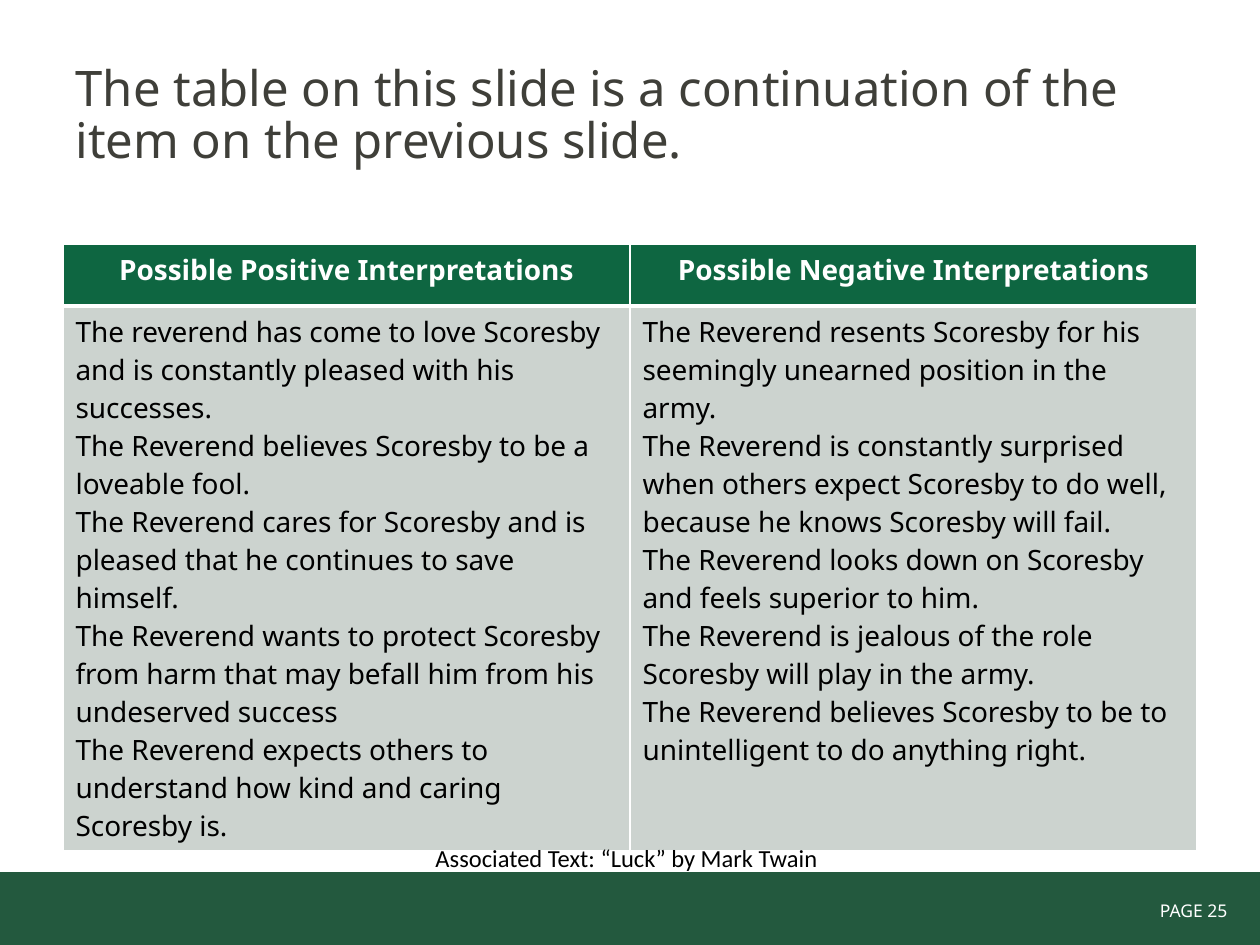
import dataclasses

import lxml.etree
import pptx
import pptx.dml.color
import pptx.enum.shapes
import pptx.enum.text
import pptx.oxml.ns
import pptx.util

Cm, Pt = pptx.util.Cm, pptx.util.Pt
RGBColor = pptx.dml.color.RGBColor
Align = pptx.enum.text.PP_ALIGN

WHITE = RGBColor(0xFF, 0xFF, 0xFF)
BLACK = RGBColor(0x00, 0x00, 0x00)
SLATE = RGBColor(0x3F, 0x3F, 0x39)
FOREST = RGBColor(0x23, 0x59, 0x3E)
GREEN = RGBColor(0x0E, 0x66, 0x41)
MIST = RGBColor(0xCC, 0xD3, 0xCF)
SANS = "Noto Sans"


@dataclasses.dataclass
class Style:
    size: float
    color: RGBColor
    name: str = SANS
    bold: bool = False
    align: Align = Align.LEFT


@dataclasses.dataclass
class Column:
    head: str
    points: list[str]


@dataclasses.dataclass
class Label:
    text: str
    box: tuple[float, float, float, float]
    style: Style
    wrap: bool


HEAD = Style(16, WHITE, bold=True, align=Align.CENTER)
BODY = Style(16, BLACK)

COLUMNS = [
    Column("Possible Positive Interpretations", [
        "The reverend has come to love Scoresby and is constantly pleased with his successes.",
        "The Reverend believes Scoresby to be a loveable fool.",
        "The Reverend cares for Scoresby and is pleased that he continues to save himself.",
        "The Reverend wants to protect Scoresby from harm that may befall him "
        "from his undeserved success",
        "The Reverend expects others to understand how kind and caring Scoresby is.",
    ]),
    Column("Possible Negative Interpretations", [
        "The Reverend resents Scoresby for his seemingly unearned position in the army.",
        "The Reverend is constantly surprised when others expect Scoresby to do well, "
        "because he knows Scoresby will fail.",
        "The Reverend looks down on Scoresby and feels superior to him.",
        "The Reverend is jealous of the role Scoresby will play in the army.",
        "The Reverend believes Scoresby to be to unintelligent to do anything right.",
    ]),
]

LABELS = [
    Label("PAGE 25", (20.95, 18.01, 4.04, 0.69),
          Style(10, WHITE, align=Align.RIGHT), True),
    Label("Associated Text: “Luck” by Mark Twain", (8.53, 16.87, 8.28, 0.86),
          Style(14, BLACK, "Calibri"), False),
]


def write(frame, lines: list[str], style: Style) -> None:
    frame.text = "\n".join(lines)
    for para in frame.paragraphs:
        para.alignment = style.align
        font = para.font
        font.name, font.size, font.bold = style.name, Pt(style.size), style.bold
        font.color.rgb = style.color


def edge(cell, side: str, width: float) -> None:
    qn = pptx.oxml.ns.qn
    props = cell._tc.get_or_add_tcPr()
    line = lxml.etree.SubElement(props, qn(f"a:ln{side}"), w=str(Pt(width)))
    fill = lxml.etree.SubElement(line, qn("a:solidFill"))
    lxml.etree.SubElement(fill, qn("a:srgbClr"), val=str(WHITE))


def fill_cell(cell, lines: list[str], style: Style, color: RGBColor,
              top: float, base: float) -> None:
    for side, width in (("L", 1), ("R", 1), ("T", top), ("B", base)):
        edge(cell, side, width)
    cell.fill.solid()
    cell.fill.fore_color.rgb = color
    write(cell.text_frame, lines, style)


def add_label(slide, label: Label) -> None:
    frame = slide.shapes.add_textbox(*map(Cm, label.box)).text_frame
    frame.word_wrap = label.wrap
    write(frame, [label.text], label.style)


def main() -> None:
    deck = pptx.Presentation()
    deck.slide_width, deck.slide_height = Cm(25.4), Cm(19.05)
    slide = deck.slides.add_slide(deck.slide_layouts[5])

    # Footer band
    band = slide.shapes.add_shape(
        pptx.enum.shapes.MSO_SHAPE.RECTANGLE, 0, Cm(17.58), Cm(25.4), Cm(1.47))
    band.shadow.inherit = False
    band.fill.solid()
    band.fill.fore_color.rgb = FOREST
    band.line.fill.background()

    # Title
    title = slide.shapes.title
    title.left, title.top, title.width, title.height = map(Cm, (1.27, 0.76, 22.86, 3.18))
    frame = title.text_frame
    write(frame, ["The table on this slide is a continuation of the item on the previous slide."],
          Style(28, SLATE))
    frame.vertical_anchor = pptx.enum.text.MSO_ANCHOR.MIDDLE
    frame.paragraphs[0].line_spacing = 0.9

    # Table of interpretations
    table = slide.shapes.add_table(
        2, len(COLUMNS), Cm(1.27), Cm(4.93), Cm(22.86), Cm(10.51)).table
    for row, height in zip(table.rows, (1.24, 9.27)):
        row.height = Cm(height)
    for i, column in enumerate(COLUMNS):
        fill_cell(table.cell(0, i), [column.head], HEAD, GREEN, 1, 3)
        fill_cell(table.cell(1, i), column.points, BODY, MIST, 3, 1)

    # Page number and source line
    for label in LABELS:
        add_label(slide, label)

    deck.save("out.pptx")


if __name__ == "__main__":
    main()
